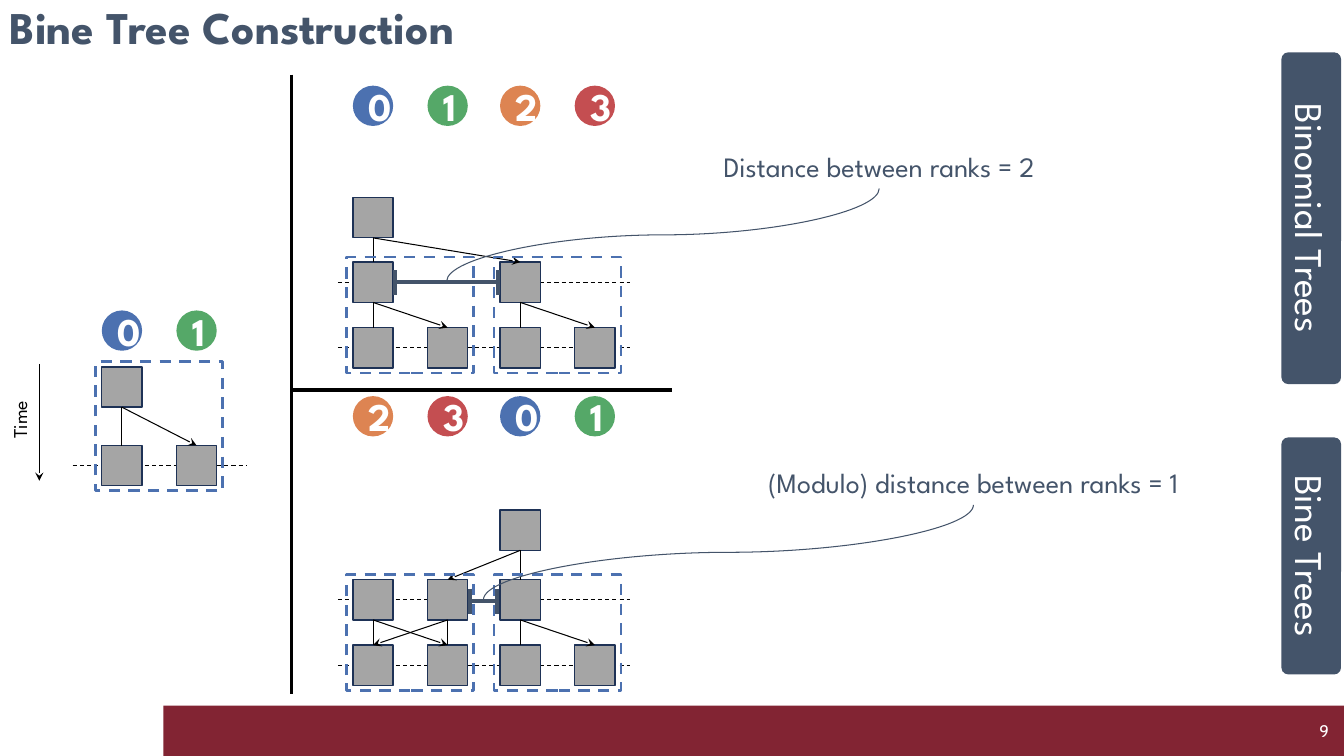
from dataclasses import dataclass

from lxml.etree import SubElement
from pptx import Presentation
from pptx.dml.color import RGBColor
from pptx.enum.dml import MSO_LINE
from pptx.enum.shapes import MSO_CONNECTOR as Conn, MSO_SHAPE as Geo
from pptx.enum.text import MSO_ANCHOR as Anchor, MSO_AUTO_SIZE as Fit, PP_ALIGN as Align
from pptx.oxml.ns import qn
from pptx.shapes.autoshape import Shape
from pptx.shapes.connector import Connector
from pptx.util import Inches, Pt

SPARTAN = "League Spartan"
SLATE, BLUE, BLACK, WHITE = "44546A", "4C71B0", "000000", "FFFFFF"
RANKS = (BLUE, "55A868", "DD8452", "C44E51")
SIDE = 0.4
BOTTOM, TOP = 2, 0

Cell = tuple[int, int]  # column, row
Point = tuple[float, float]
Link = tuple[Cell, Cell]


@dataclass
class Tree:
    ranks: tuple[int, ...]
    head: float
    cols: tuple[float, ...]
    rows: tuple[float, ...]
    reach: float
    links: tuple[Link, ...]


@dataclass
class Gap:
    left: float
    right: float
    y: float
    text: str
    box: tuple[float, float, float, float]


@dataclass
class Tab:
    text: str
    left: float
    top: float
    width: float


COLS = (3.5, 4.24, 4.96, 5.7)
PAIRS: tuple[Link, ...] = (((0, 1), (0, 2)), ((0, 1), (1, 2)),
                           ((2, 1), (2, 2)), ((2, 1), (3, 2)))
TREES = (
    Tree((0, 1), 3.08, (1.01, 1.75), (3.64, 4.42), 0.29,
         (((0, 0), (0, 1)), ((0, 0), (1, 1)))),
    Tree((0, 1, 2, 3), 0.85, COLS, (1.96, 2.6, 3.25), 0.15,
         (((0, 0), (0, 1)), ((0, 0), (2, 1))) + PAIRS),
    Tree((2, 3, 0, 1), 3.93, COLS, (5.06, 5.75, 6.4), 0.15,
         (((2, 0), (2, 1)), ((2, 0), (1, 1)),
          ((1, 1), (0, 2)), ((1, 1), (1, 2))) + PAIRS),
)
GAPS = (
    Gap(3.92, 4.94, 2.8, "Distance between ranks = 2", (6.16, 1.43, 5.12, 0.44)),
    Gap(4.66, 4.93, 5.96, "(Modulo) distance between ranks = 1", (6.89, 4.57, 5.53, 0.44)),
)
TABS = (Tab("Binomial Trees", 11.36, 1.87, 3.29), Tab("Bine Trees", 11.83, 5.22, 2.35))

deck = Presentation()
deck.slide_width, deck.slide_height = Inches(13.33), Inches(7.5)
shapes = deck.slides.add_slide(deck.slide_layouts[6]).shapes


def color(code: str) -> RGBColor:
    return RGBColor.from_string(code)


def write(shape: Shape, text: str, size: float, ink: str, font: str = SPARTAN,
          bold: bool = False, align: Align = Align.CENTER,
          anchor: Anchor = Anchor.MIDDLE) -> None:
    frame = shape.text_frame
    frame.word_wrap = True
    frame.vertical_anchor = anchor
    para = frame.paragraphs[0]
    para.text, para.alignment = text, align
    para.font.size, para.font.name, para.font.bold = Pt(size), font, bold
    para.font.color.rgb = color(ink)


def label(left: float, top: float, width: float, height: float) -> Shape:
    return shapes.add_textbox(Inches(left), Inches(top), Inches(width), Inches(height))


def block(geo: Geo, left: float, top: float, width: float, height: float,
          fill: str = "", edge: str = "", weight: float = 1) -> Shape:
    shape = shapes.add_shape(geo, Inches(left), Inches(top), Inches(width), Inches(height))
    shape.shadow.inherit = False
    if fill:
        shape.fill.solid()
        shape.fill.fore_color.rgb = color(fill)
    else:
        shape.fill.background()
    if edge:
        shape.line.color.rgb = color(edge)
        shape.line.width = Pt(weight)
    else:
        shape.line.fill.background()
    return shape


def line(start: Point, end: Point, ink: str = BLACK, weight: float = 0.75,
         dash: bool = False, arrow: bool = False, kind: Conn = Conn.STRAIGHT) -> Connector:
    wire = shapes.add_connector(kind, *map(Inches, start + end))
    wire.line.color.rgb = color(ink)
    wire.line.width = Pt(weight)
    if dash:
        wire.line.dash_style = MSO_LINE.DASH
    props = wire._element.spPr
    if arrow:
        SubElement(props.find(qn("a:ln")), qn("a:tailEnd"), type="stealth")
    SubElement(props, qn("a:effectLst"))
    return wire


def curve(start: Point, end: Point) -> None:
    """Draw an S-curve that leaves and arrives vertically, by a quarter turn."""
    x, y = (start[0] + end[0]) / 2, (start[1] + end[1]) / 2
    w, h = abs(end[1] - start[1]) / 2, abs(end[0] - start[0]) / 2
    wire = line((x + w, y + h), (x - w, y - h), SLATE, kind=Conn.CURVE)
    wire._element.spPr.find(qn("a:xfrm")).set("rot", "5400000")


def draw_tree(tree: Tree) -> None:
    for rank, x in zip(tree.ranks, tree.cols):
        disc = block(Geo.OVAL, x, tree.head, SIDE, SIDE, RANKS[rank])
        write(disc, str(rank), 28, WHITE, bold=True)
    for y in tree.rows[1:]:
        mid = y + SIDE / 2
        line((tree.cols[0] - tree.reach, mid),
             (tree.cols[-1] + SIDE + tree.reach, mid), dash=True)
    cells = sorted({cell for link in tree.links for cell in link})
    nodes = {(col, row): block(Geo.RECTANGLE, tree.cols[col], tree.rows[row],
                               SIDE, SIDE, "A5A5A5", "1E3256")
             for col, row in cells}
    for start, end in tree.links:
        wire = line((0, 0), (1, 1), arrow=start[0] != end[0])
        wire.begin_connect(nodes[start], BOTTOM)
        wire.end_connect(nodes[end], TOP)
    for x in tree.cols[::2]:
        top = tree.rows[-2] - 0.05
        frame = block(Geo.RECTANGLE, x - 0.06, top, 1.26,
                      tree.rows[-1] + SIDE + 0.05 - top, edge=BLUE, weight=2)
        frame.line.dash_style = MSO_LINE.DASH


def draw_gap(gap: Gap) -> None:
    left, top, width, height = gap.box
    write(label(*gap.box), gap.text, 20, SLATE, anchor=Anchor.TOP)
    curve(((gap.left + gap.right) / 2, gap.y - 0.01), (left + width / 2, top + height))
    for x in (gap.left, gap.right):
        line((x, gap.y - 0.12), (x, gap.y + 0.13), SLATE, 3)
    line((gap.left, gap.y), (gap.right, gap.y), SLATE, 3)


def draw_tab(tab: Tab) -> None:
    shape = block(Geo.ROUNDED_RECTANGLE, tab.left, tab.top, tab.width, 0.59, SLATE)
    shape.adjustments[0] = 0.11
    shape.rotation = 90
    write(shape, tab.text, 28, WHITE)


def main() -> None:
    block(Geo.RECTANGLE, 1.62, 7, 11.72, 0.5, "822433")
    title = label(0, 0, 12.42, 0.59)
    write(title, "Bine Tree Construction", 32.4, SLATE, bold=True, align=Align.LEFT)
    title.text_frame.paragraphs[0].line_spacing = 0.9
    for tree in TREES:
        draw_tree(tree)
    line((0.39, 3.61), (0.39, 4.77), arrow=True)
    time = label(-0.11, 4, 0.58, 0.31)
    write(time, "Time", 14, BLACK, align=Align.LEFT, anchor=Anchor.TOP)
    time.text_frame.word_wrap = False
    time.text_frame.auto_size = Fit.SHAPE_TO_FIT_TEXT
    time.rotation = 270
    line((2.89, 0.74), (2.89, 6.89), weight=2.25)
    line((2.89, 3.87), (6.67, 3.87), weight=2.25)
    for gap in GAPS:
        draw_gap(gap)
    for tab in TABS:
        draw_tab(tab)
    write(label(10.28, 7.05, 3, 0.4), "9", 12, WHITE, "Cabin", align=Align.RIGHT)
    deck.save("out.pptx")


if __name__ == "__main__":
    main()
